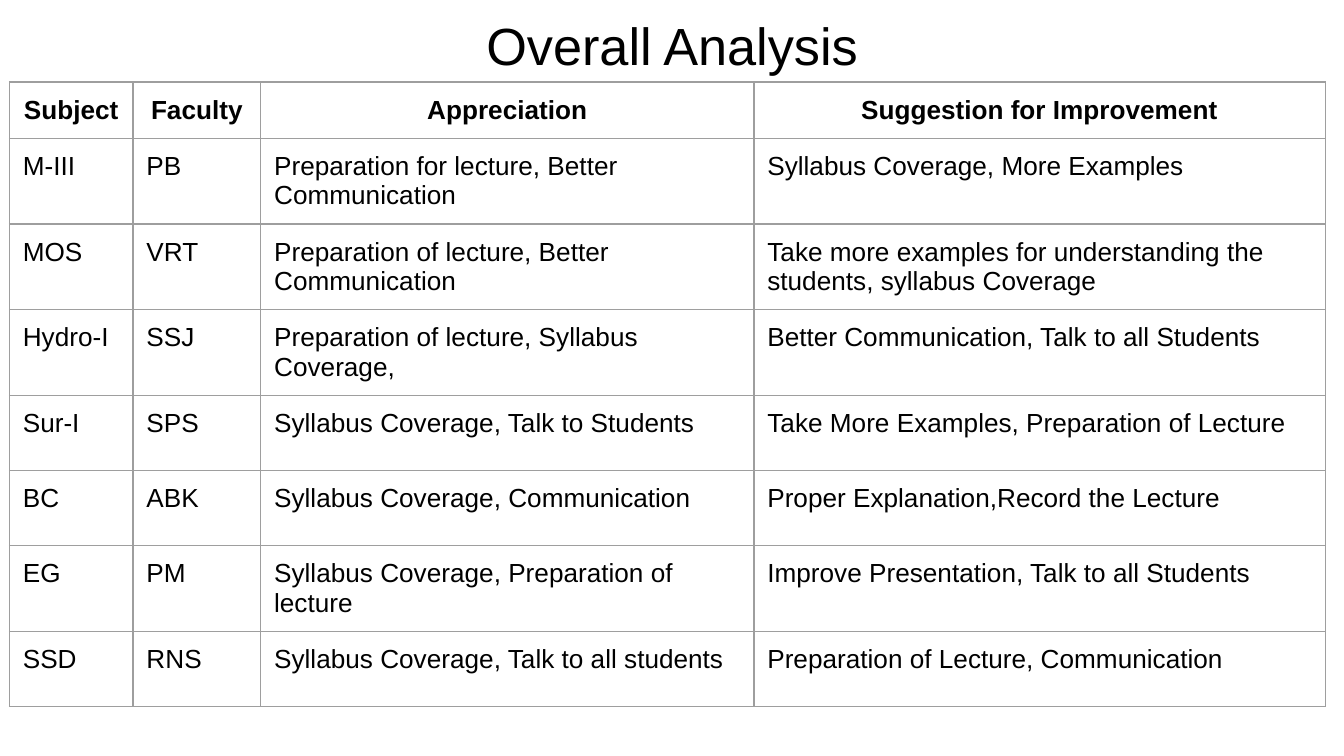
from lxml import etree
from pptx import Presentation
from pptx.dml.color import RGBColor
from pptx.enum.text import MSO_ANCHOR, MSO_AUTO_SIZE, PP_ALIGN
from pptx.oxml.ns import qn
from pptx.util import Inches, Pt

CENTER, LEFT = PP_ALIGN.CENTER, PP_ALIGN.LEFT
TOP = MSO_ANCHOR.TOP
TITLE_ONLY = 5

TITLE = "Overall Analysis"
HEADER = ("Subject", "Faculty", "Appreciation", "Suggestion for Improvement")
FEEDBACK = [
    ("M-III", "PB", "Preparation for lecture, Better Communication",
     "Syllabus Coverage, More Examples"),
    ("MOS", "VRT", "Preparation of lecture, Better Communication",
     "Take more examples for understanding the students, syllabus Coverage"),
    ("Hydro-I", "SSJ", "Preparation of lecture, Syllabus Coverage,",
     "Better Communication, Talk to all Students"),
    ("Sur-I", "SPS", "Syllabus Coverage, Talk to Students",
     "Take More Examples, Preparation of Lecture"),
    ("BC", "ABK", "Syllabus Coverage, Communication",
     "Proper Explanation,Record the Lecture"),
    ("EG", "PM", "Syllabus Coverage, Preparation of lecture",
     "Improve Presentation, Talk to all Students"),
    ("SSD", "RNS", "Syllabus Coverage, Talk to all students",
     "Preparation of Lecture, Communication"),
]

SLIDE_WIDTH = 10
SLIDE_HEIGHT = SLIDE_WIDTH * 9 / 16
TITLE_BOX = (0.34, 0, 9.32, 0.61)
TABLE_LEFT, TABLE_TOP = 0.07, 0.61
COLUMN_WIDTHS = (0.92, 0.95, 3.67, 4.25)
HEADER_HEIGHT, ROW_HEIGHT = 0.37, 0.56
MARGIN = Inches(0.1)
MARGINS = {f"margin_{side}": MARGIN for side in ("left", "top", "right", "bottom")}
BORDER_COLOR, BORDER_WIDTH = "9E9E9E", Pt(0.75)


def set_attributes(target, values):
    for name, value in values.items():
        setattr(target, name, value)


def write_text(text_frame, text, size, alignment, bold=False):
    paragraph = text_frame.paragraphs[0]
    paragraph.alignment = alignment
    run = paragraph.add_run()
    run.text = text
    set_attributes(run.font, {"name": "Arial", "size": Pt(size), "bold": bold})
    run.font.color.rgb = RGBColor.from_string("000000")


def add_borders(cell):
    properties = cell._tc.get_or_add_tcPr()
    for position, tag in enumerate(("a:lnL", "a:lnR", "a:lnT", "a:lnB")):
        line = etree.Element(qn(tag), w=str(BORDER_WIDTH))
        fill = etree.SubElement(line, qn("a:solidFill"))
        etree.SubElement(fill, qn("a:srgbClr"), val=BORDER_COLOR)
        properties.insert(position, line)


def add_title(slide):
    title = slide.shapes.title
    box = map(Inches, TITLE_BOX)
    set_attributes(title, dict(zip(("left", "top", "width", "height"), box)))
    set_attributes(title.text_frame, {
        **MARGINS, "vertical_anchor": TOP, "word_wrap": True,
        "auto_size": MSO_AUTO_SIZE.NONE})
    write_text(title.text_frame, TITLE, 28, CENTER)


def add_feedback_table(slide):
    rows = [HEADER, *FEEDBACK]
    heights = [HEADER_HEIGHT] + [ROW_HEIGHT] * len(FEEDBACK)
    frame = slide.shapes.add_table(
        len(rows), len(HEADER), Inches(TABLE_LEFT), Inches(TABLE_TOP),
        Inches(sum(COLUMN_WIDTHS)), Inches(sum(heights)))
    table = frame.table
    set_attributes(table, {"first_row": False, "horz_banding": False})
    for column, width in zip(table.columns, COLUMN_WIDTHS):
        column.width = Inches(width)
    for row_index, (values, height) in enumerate(zip(rows, heights)):
        table.rows[row_index].height = Inches(height)
        is_header = row_index == 0
        for column_index, value in enumerate(values):
            cell = table.cell(row_index, column_index)
            set_attributes(cell, {**MARGINS, "vertical_anchor": TOP})
            cell.fill.background()
            add_borders(cell)
            write_text(cell.text_frame, value, 14,
                       CENTER if is_header else LEFT, bold=is_header)


def main():
    presentation = Presentation()
    presentation.slide_width = Inches(SLIDE_WIDTH)
    presentation.slide_height = Inches(SLIDE_HEIGHT)
    slide = presentation.slides.add_slide(presentation.slide_layouts[TITLE_ONLY])
    add_title(slide)
    add_feedback_table(slide)
    presentation.save("out.pptx")


if __name__ == "__main__":
    main()
